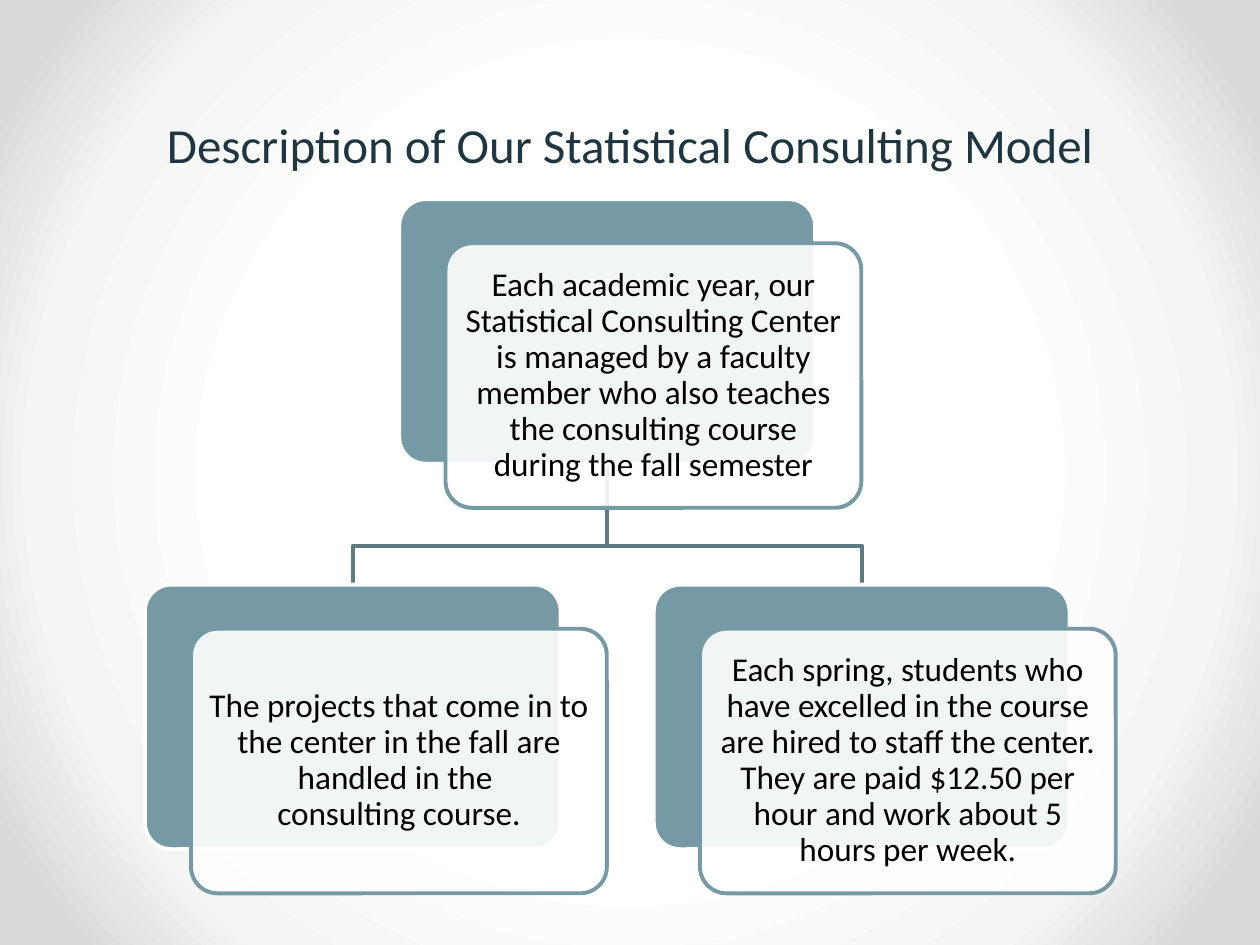
"""Build a slide on a statistical consulting model as a small tree of cards."""
from lxml.etree import SubElement
from pptx import Presentation
from pptx.dml.color import RGBColor
from pptx.enum.shapes import MSO_SHAPE as Shape
from pptx.enum.text import MSO_ANCHOR as Anchor, MSO_AUTO_SIZE as Fit, PP_ALIGN as Align
from pptx.oxml import parse_xml
from pptx.oxml.ns import nsdecls, qn
from pptx.util import Pt

WHITE = RGBColor(0xFF, 0xFF, 0xFF)
BLACK = RGBColor(0, 0, 0)
NAVY = RGBColor(0x1D, 0x36, 0x41)
TEAL = RGBColor(0x75, 0x9A, 0xA5)
SLATE = RGBColor(0x5E, 0x7B, 0x84)
PALE = RGBColor(0xF4, 0xF4, 0xF4)
GREY = RGBColor(0xDA, 0xDA, 0xDA)


def write(frame, text, size=19, color=BLACK, inset=5.76, space=1, anchor=Anchor.MIDDLE):
    frame.word_wrap = True
    frame.vertical_anchor = anchor
    frame.margin_left = frame.margin_right = Pt(inset)
    frame.margin_top = frame.margin_bottom = Pt(min(inset, 5.76))
    para = frame.paragraphs[0]
    para.text = text
    para.alignment = Align.CENTER
    para.line_spacing = space
    for run in para.runs:
        run.font.name = "Calibri"
        run.font.size = Pt(size)
        run.font.color.rgb = color


def paint(shape, fill, line):
    shape.shadow.inherit = False
    if fill is None:
        shape.fill.background()
    else:
        shape.fill.solid()
        shape.fill.fore_color.rgb = fill
    shape.line.color.rgb = line
    shape.line.width = Pt(2.25)


deck = Presentation()
deck.slide_width, deck.slide_height = Pt(720), Pt(540)
slide = deck.slides.add_slide(deck.slide_layouts[6])
shapes = slide.shapes

back = slide.background.fill
back.solid()
solid = slide.element.find(".//" + qn("a:solidFill"))
stops = "".join(
    f'<a:gs pos="{pos * 1000}"><a:srgbClr val="{tone}"/></a:gs>'
    for pos, tone in ((50, WHITE), (76, PALE), (92, GREY))
)
grad = parse_xml(
    f'<a:gradFill {nsdecls("a")} rotWithShape="1"><a:gsLst>{stops}</a:gsLst>'
    '<a:path path="circle"><a:fillToRect l="50000" t="50000" r="50000" b="50000"/>'
    "</a:path></a:gradFill>"
)
solid.getparent().replace(solid, grad)

title = shapes.add_textbox(Pt(36), Pt(59.8), Pt(648), Pt(41))
write(title.text_frame, "Description of Our Statistical Consulting Model",
      size=28, color=NAVY, inset=7.2, anchor=Anchor.TOP)
title.text_frame.auto_size = Fit.SHAPE_TO_FIT_TEXT

WIDE, HIGH = 237.6, 151.2
SHIFT, DROP = 26.4, 25.2
ROOT, STEP = 228.2, 145.4
TOP, LOW = 113.8, 334.1
MID = ROOT + WIDE / 2

for side in (1, -1):
    end = MID + side * STEP
    path = shapes.build_freeform(Pt(MID), Pt(TOP + HIGH))
    path.add_line_segments(
        [(Pt(MID), Pt(311.8)), (Pt(end), Pt(311.8)), (Pt(end), Pt(LOW))], close=False)
    paint(path.convert_to_shape(), None, SLATE)

cards = [
    (ROOT, TOP, "Each academic year, our Statistical Consulting Center is managed by "
     "a faculty member who also teaches the consulting course during the fall semester"),
    (ROOT - STEP, LOW, "The projects that come in to the center in the fall are "
     "handled in the \nconsulting course."),
    (ROOT + STEP, LOW, "Each spring, students who have excelled in the course are hired "
     "to staff the center. They are paid $12.50 per hour and work about 5 hours per week."),
]
for left, top, text in cards:
    for step, fill, line in ((0, TEAL, WHITE), (1, WHITE, TEAL)):
        card = shapes.add_shape(Shape.ROUNDED_RECTANGLE, Pt(left + step * SHIFT),
                                Pt(top + step * DROP), Pt(WIDE), Pt(HIGH))
        card.adjustments[0] = 0.1
        paint(card, fill, line)
    tint = card.fill._xPr.find(qn("a:solidFill"))[0]
    SubElement(tint, qn("a:alpha"), val="90000")
    write(card.text_frame, text, space=0.9)

deck.save("out.pptx")
